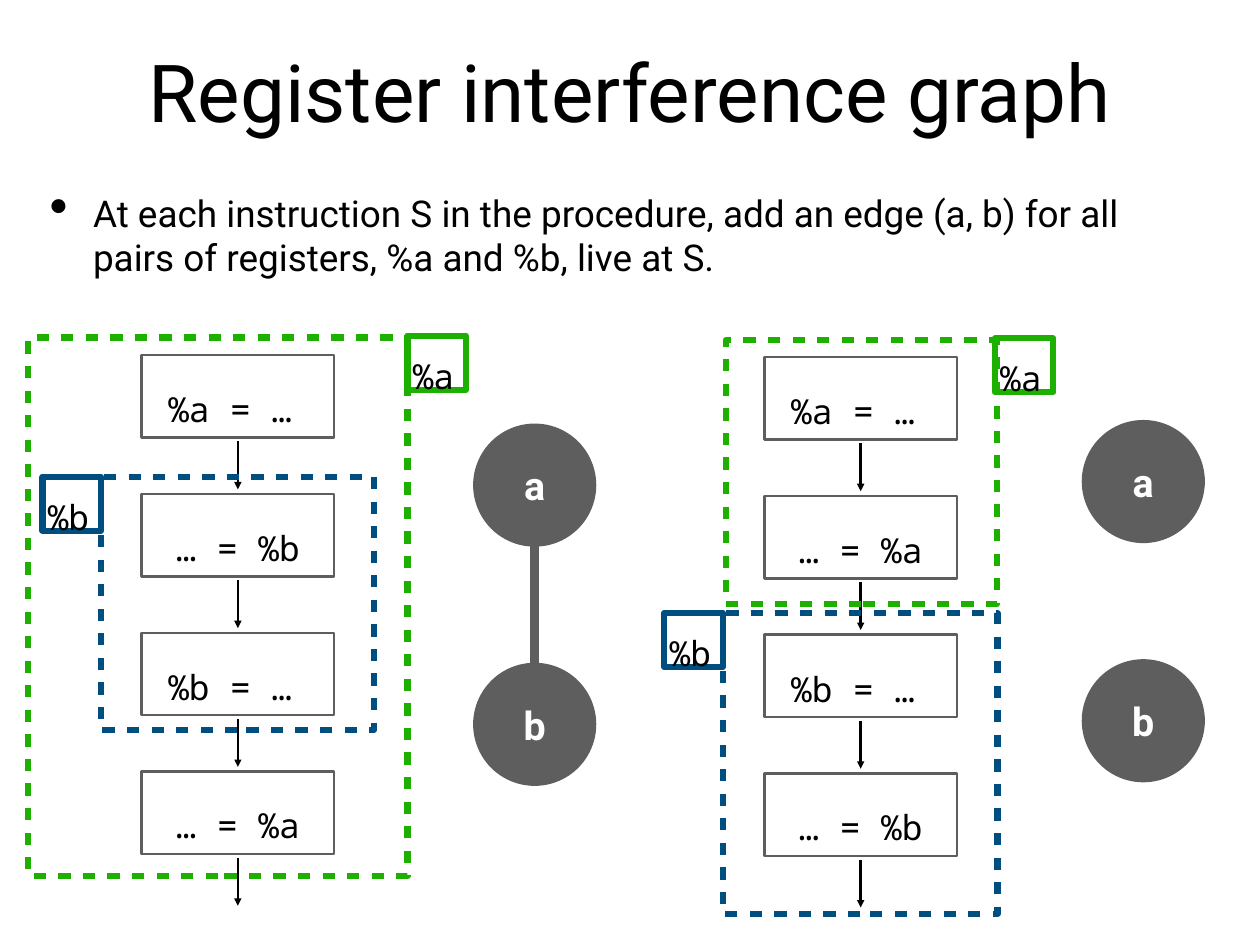
from dataclasses import dataclass

import lxml.etree
import pptx
import pptx.dml.color
import pptx.enum.shapes
import pptx.enum.text
import pptx.oxml.ns
import pptx.shapes.autoshape
import pptx.shapes.base
import pptx.slide
import pptx.util

Pt = pptx.util.Pt
RGBColor = pptx.dml.color.RGBColor
Shape = pptx.shapes.autoshape.Shape
Slide = pptx.slide.Slide
ShapeKind = pptx.enum.shapes.MSO_SHAPE
Align = pptx.enum.text.PP_ALIGN

BLACK = RGBColor(0x00, 0x00, 0x00)
WHITE = RGBColor(0xFF, 0xFF, 0xFF)
GREY = RGBColor(0x5E, 0x5E, 0x5E)
GREEN = RGBColor(0x1E, 0xB0, 0x01)
BLUE = RGBColor(0x00, 0x4D, 0x80)

SANS = "Roboto"
MONO = "Noto Sans Mono"
INSET = 4.3
BOX_WIDTH, BOX_HEIGHT, BOX_PITCH = 156.2, 67, 112.8
ARROW_START, ARROW_LENGTH = 70, 39
TAG_WIDTH, TAG_HEIGHT = 47.5, 43.9
NODE_SIZE, NODE_PITCH = 100.1, 194.4


@dataclass(frozen=True)
class LiveRange:
    register: str
    color: RGBColor
    left: float
    top: float
    width: float
    height: float
    tag_left: float
    tag_top: float


@dataclass(frozen=True)
class Example:
    left: float
    top: float
    instructions: tuple[str, ...]
    ranges: tuple[LiveRange, ...]
    node_left: float
    node_top: float
    interferes: bool


EXAMPLES = (
    Example(
        621.4, 290.2, ("%a = …", "… = %a", "%b = …", "… = %b"),
        (LiveRange("%a", GREEN, 589.7, 276.5, 220.3, 214.6, 808.6, 275),
         LiveRange("%b", BLUE, 587.5, 498.2, 223.2, 244.8, 540, 498.2)),
        879.1, 341.3, False,
    ),
    Example(
        115.2, 288.7, ("%a = …", "… = %b", "%b = …", "… = %a"),
        (LiveRange("%a", GREEN, 23, 274.3, 308.2, 437.8, 331.2, 272.9),
         LiveRange("%b", BLUE, 82.1, 387.4, 221.8, 205.9, 34.6, 387.4)),
        384.5, 344.2, True,
    ),
)


def add_child(parent: lxml.etree._Element, tag: str, **attributes: str) -> lxml.etree._Element:
    return lxml.etree.SubElement(parent, pptx.oxml.ns.qn(tag), attributes)


def outline_of(shape: pptx.shapes.base.BaseShape) -> lxml.etree._Element:
    return shape.element.spPr.find(pptx.oxml.ns.qn("a:ln"))


def write_text(
    shape: Shape, text: str, *, size: float, font: str = SANS, color: RGBColor = BLACK,
    bold: bool = False, align: Align = Align.LEFT, wrap: bool = True,
    line_spacing: float | None = None, space_before: float = 0, bullet_indent: float = 0,
) -> None:
    frame = shape.text_frame
    frame.word_wrap = wrap
    frame.vertical_anchor = pptx.enum.text.MSO_ANCHOR.MIDDLE
    frame.margin_left = frame.margin_right = Pt(INSET)
    frame.margin_top = frame.margin_bottom = Pt(INSET)
    para = frame.paragraphs[0]
    para.alignment = align
    para.space_before = Pt(space_before)
    if line_spacing is not None:
        para.line_spacing = Pt(line_spacing)
    if bullet_indent:
        properties = para._p.get_or_add_pPr()
        properties.set("marL", str(Pt(bullet_indent)))
        properties.set("indent", str(-Pt(bullet_indent)))
        add_child(properties, "a:buSzPct", val="145000")
        add_child(properties, "a:buChar", char="•")
    span = para.add_run()
    span.text = text
    span.font.size = Pt(size)
    span.font.name = font
    span.font.bold = bold
    span.font.color.rgb = color


def add_text_box(slide: Slide, left: float, top: float, width: float, height: float) -> Shape:
    return slide.shapes.add_textbox(Pt(left), Pt(top), Pt(width), Pt(height))


def add_figure(
    slide: Slide, kind: ShapeKind, left: float, top: float, width: float, height: float, *,
    fill: RGBColor | None = None, line: RGBColor | None = None, weight: float = 2,
) -> Shape:
    shape = slide.shapes.add_shape(kind, Pt(left), Pt(top), Pt(width), Pt(height))
    shape.shadow.inherit = False
    if fill is None:
        shape.fill.background()
    else:
        shape.fill.solid()
        shape.fill.fore_color.rgb = fill
    if line is None:
        shape.line.fill.background()
    else:
        shape.line.color.rgb = line
        shape.line.width = Pt(weight)
    return shape


def add_vertical_line(
    slide: Slide, center: float, top: float, bottom: float, *,
    color: RGBColor, weight: float, arrow: bool = False,
) -> None:
    connector = slide.shapes.add_connector(
        pptx.enum.shapes.MSO_CONNECTOR.STRAIGHT, Pt(center), Pt(top), Pt(center), Pt(bottom))
    connector.line.color.rgb = color
    connector.line.width = Pt(weight)
    if arrow:
        add_child(outline_of(connector), "a:tailEnd", type="triangle")
    add_child(connector.element.spPr, "a:effectLst")


def draw_instruction(slide: Slide, left: float, top: float, text: str) -> None:
    add_figure(slide, ShapeKind.RECTANGLE, left, top, BOX_WIDTH, BOX_HEIGHT,
               fill=WHITE, line=GREY)
    offset = 17.3 if text.startswith("%") else 23.4
    box = add_text_box(slide, left + offset, top + 13.9, 110.2, 38.9)
    write_text(box, text, size=28, font=MONO, wrap=False, line_spacing=54)
    start = top + ARROW_START
    add_vertical_line(slide, left + BOX_WIDTH / 2, start, start + ARROW_LENGTH,
                      color=BLACK, weight=2, arrow=True)


def draw_range(slide: Slide, live: LiveRange) -> None:
    region = add_figure(slide, ShapeKind.RECTANGLE, live.left, live.top, live.width,
                        live.height, line=live.color, weight=5)
    dashes = add_child(outline_of(region), "a:custDash")
    add_child(dashes, "a:ds", d="200000", sp="200000")
    tag = add_figure(slide, ShapeKind.RECTANGLE, live.tag_left, live.tag_top,
                     TAG_WIDTH, TAG_HEIGHT, line=live.color, weight=5)
    write_text(tag, live.register, size=28, font=MONO, line_spacing=54)


def draw_graph(slide: Slide, example: Example) -> None:
    for index, name in enumerate("ab"):
        node = add_figure(slide, ShapeKind.OVAL, example.node_left,
                          example.node_top + index * NODE_PITCH, NODE_SIZE, NODE_SIZE, fill=GREY)
        write_text(node, name, size=32, color=WHITE, bold=True, align=Align.CENTER)
    if example.interferes:
        add_vertical_line(slide, example.node_left + NODE_SIZE / 2,
                          example.node_top + NODE_SIZE - 8, example.node_top + NODE_PITCH + 8,
                          color=GREY, weight=7)


def draw_example(slide: Slide, example: Example) -> None:
    for index, text in enumerate(example.instructions):
        draw_instruction(slide, example.left, example.top + index * BOX_PITCH, text)
    for live in example.ranges:
        draw_range(slide, live)
    draw_graph(slide, example)


def main() -> None:
    deck = pptx.Presentation()
    deck.slide_width, deck.slide_height = Pt(1024), Pt(768)
    page = deck.slides.add_slide(deck.slide_layouts[6])
    title = add_text_box(page, 75, 20, 874, 107)
    write_text(title, "Register interference graph", size=65, align=Align.CENTER)
    body = add_text_box(page, 36, 124.5, 951, 132.5)
    write_text(body, "At each instruction S in the procedure, add an edge (a, b) for all pairs "
               "of registers, %a and %b, live at S.", size=30, space_before=42, bullet_indent=35.3)
    for example in EXAMPLES:
        draw_example(page, example)
    deck.save("out.pptx")


if __name__ == "__main__":
    main()
